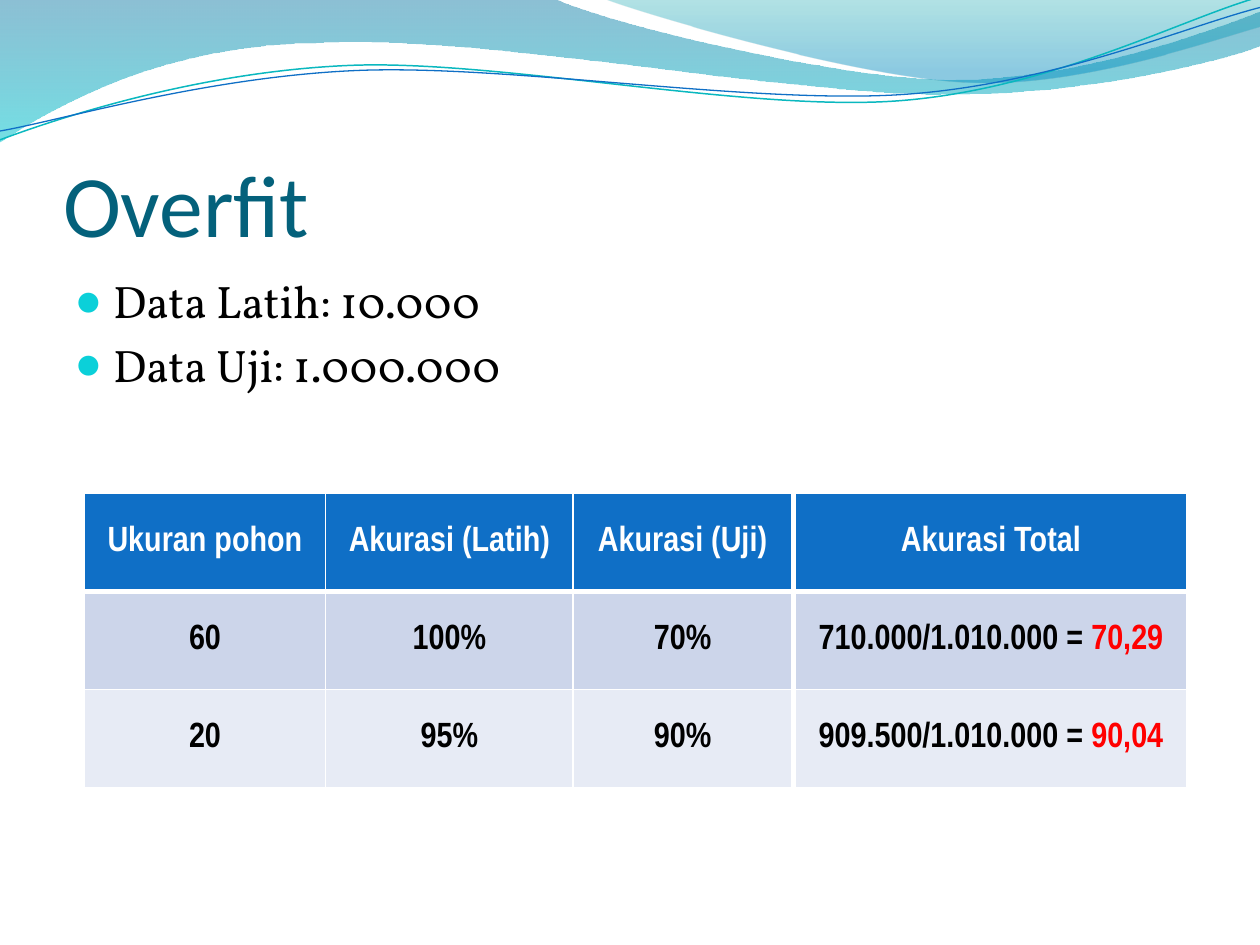
from dataclasses import dataclass
from math import cos, radians, sin

from lxml.etree import SubElement
from pptx import Presentation
from pptx.dml.color import RGBColor
from pptx.enum.text import MSO_ANCHOR as Anchor, MSO_AUTO_SIZE as AutoSize, PP_ALIGN as Align
from pptx.oxml.ns import qn
from pptx.util import Pt

Point = tuple[float, float]
WHITE, BLACK, RED, BLUE = "FFFFFF", "000000", "FF0000", "0F6FC6"
LINE_TILT = 357.3


@dataclass
class Stop:
    position: float
    color: str
    opacity: int


@dataclass
class Wave:
    start: Point
    segments: list[tuple[Point, ...]]  # one point: straight line; three: cubic curve
    stops: tuple[Stop, ...] = ()
    line_color: str = ""
    line_width: float = 0
    center: Point = (0, 0)
    rotation: float = 0


@dataclass
class Grid:
    left: float
    widths: list[float]
    rows: list[list[tuple[str, ...]]]  # a second text in a cell is the red result


WAVES = [
    Wave((0, -0.7), [
        ((316.8, -0.7),),
        ((342.7, 12.2), (478.1, 45.4), (545.8, 45.4)),
        ((614.2, 45.4), (689.8, 18.7), (720, 6.5)),
        ((720.7, 25.9),),
        ((707.8, 31.7), (626.4, 54.7), (537.1, 54)),
        ((447.8, 54), (275, 20.2), (185, 24.5)),
        ((92.9, 25.2), (33.1, 59.8), (-0.7, 81.4)),
    ], stops=(Stop(0, "0074A1", 45), Stop(1, "00C6CF", 55))),
    Wave((344.9, -0.7), [
        ((366.5, 7.9), (491, 44.6), (553.7, 46.8)),
        ((616.3, 49.7), (691.9, 23), (720, 15.1)),
        ((720, 0),),
    ], stops=(Stop(0, "00A1A9", 30), Stop(0.8, "008BBF", 45))),
    Wave((0, 79.9), [
        ((34.6, 67), (113.8, 41), (199.4, 37.4)),
        ((284.4, 33.8), (427, 64.1), (513.4, 57.6)),
        ((599.8, 51.1), (675.4, 10.8), (718.6, -1.4)),
    ], line_color="0AB8BF", line_width=0.85, center=(359.3, 41.4), rotation=LINE_TILT),
    Wave((0, 74.9), [
        ((33.8, 69.1), (118.1, 43.9), (203.8, 40.3)),
        ((290.2, 36.7), (429.8, 59.8), (516.2, 54)),
        ((601.9, 48.2), (677.5, 15.1), (720, 4.3)),
    ], line_color=BLUE, line_width=0.75, center=(359.6, 42.5), rotation=LINE_TILT),
]

GRIDS = [
    Grid(48.2, [137.9, 141.5, 125], [
        [("Ukuran pohon",), ("Akurasi (Latih)",), ("Akurasi (Uji)",)],
        [("60",), ("100%",), ("70%",)],
        [("20",), ("95%",), ("90%",)],
    ]),
    Grid(454.3, [223.9], [
        [("Akurasi Total",)],
        [("710.000/1.010.000 = ", "70,29")],
        [("909.500/1.010.000 = ", "90,04")],
    ]),
]
GRID_TOP, ROW_HEIGHT = 282, 56
ROW_FILLS = [BLUE, "CCD5EA", "E7EBF5"]


def rgb(color: str) -> RGBColor:
    return RGBColor.from_string(color)


def format_span(span, font: str, size: float, color: str, bold: bool = False) -> None:
    span.font.name, span.font.size, span.font.bold = font, Pt(size), bold
    span.font.color.rgb = rgb(color)


def level_point(point: Point, wave: Wave) -> tuple[Pt, Pt]:
    """Where the point lies before the shape is rotated about its center."""
    angle = radians(-wave.rotation)
    (center_x, center_y), (x, y) = wave.center, point
    dx, dy = x - center_x, y - center_y
    return (Pt(center_x + dx * cos(angle) - dy * sin(angle)),
            Pt(center_y + dx * sin(angle) + dy * cos(angle)))


def bend_segments(shape, segments: list[tuple[Point, ...]]) -> None:
    """Join each three straight steps of a curve into one cubic segment."""
    steps = iter(list(shape.element.iter(qn("a:lnTo"))))
    for segment in segments:
        group = [next(steps) for _ in segment]
        if len(group) == 3:
            group[0].addprevious(curve := group[0].makeelement(qn("a:cubicBezTo")))
            for step in group:
                curve.append(step[0])
                step.getparent().remove(step)


def draw_wave(page, wave: Wave) -> None:
    points = [level_point(point, wave) for segment in wave.segments for point in segment]
    builder = page.shapes.build_freeform(*level_point(wave.start, wave))
    builder.add_line_segments(points, close=bool(wave.stops))
    shape = builder.convert_to_shape()
    bend_segments(shape, wave.segments)
    shape.rotation = wave.rotation
    shape.shadow.inherit = False
    if not wave.stops:
        shape.fill.background()
        shape.line.color.rgb = rgb(wave.line_color)
        shape.line.width = Pt(wave.line_width)
        return
    shape.line.fill.background()
    shape.fill.gradient()
    shape.fill.gradient_angle = 270
    for target, stop in zip(shape.fill.gradient_stops, wave.stops):
        target.position = stop.position
        target.color.rgb = rgb(stop.color)
    for color, stop in zip(shape.element.iter(qn("a:srgbClr")), wave.stops):
        SubElement(color, qn("a:alpha"), val=str(stop.opacity * 1000))


def draw_title(page, text: str) -> None:
    title = page.shapes.title
    title.left, title.top, title.width, title.height = Pt(36), Pt(55.8), Pt(648), Pt(90)
    frame = title.text_frame
    frame.text = text
    frame.auto_size, frame.vertical_anchor = AutoSize.NONE, Anchor.BOTTOM
    frame.margin_left = frame.margin_right = frame.margin_bottom = 0
    frame.paragraphs[0].alignment = Align.LEFT
    format_span(frame.paragraphs[0].runs[0], "Calibri", 50, "04617B")


def add_bullet(para) -> None:
    props = para._p.get_or_add_pPr()
    props.set("marL", str(Pt(21.6)))
    props.set("indent", str(-Pt(21.6)))
    SubElement(SubElement(props, qn("a:spcBef")), qn("a:spcPct"), val="20000")
    SubElement(SubElement(props, qn("a:buClr")), qn("a:srgbClr"), val="0BD0D9")
    SubElement(props, qn("a:buSzPct"), val="95000")
    SubElement(props, qn("a:buFont"), typeface="Calibri")
    SubElement(props, qn("a:buChar"), char="●")


def draw_bullets(page, lines: list[str]) -> None:
    box = page.shapes.add_textbox(Pt(36), Pt(152.6), Pt(648), Pt(105.8))
    box.text_frame.word_wrap = True
    box.text_frame.text = "\n".join(lines)
    for para in box.text_frame.paragraphs:
        add_bullet(para)
        format_span(para.runs[0], "Vollkorn", 26, BLACK)


def set_header_borders(cell) -> None:
    props = cell._tc.get_or_add_tcPr()
    for side, width in (("L", 1), ("R", 1), ("T", 1), ("B", 3)):
        line = SubElement(props, qn(f"a:ln{side}"), w=str(Pt(width)))
        SubElement(SubElement(line, qn("a:solidFill")), qn("a:srgbClr"), val=WHITE)


def draw_grid(page, grid: Grid) -> None:
    row_count = len(grid.rows)
    table = page.shapes.add_table(
        row_count, len(grid.widths), Pt(grid.left), Pt(GRID_TOP),
        Pt(sum(grid.widths)), Pt(ROW_HEIGHT * row_count)).table
    for column, width in zip(table.columns, grid.widths):
        column.width = Pt(width)
    for row, texts in enumerate(grid.rows):
        for column, parts in enumerate(texts):
            cell = table.cell(row, column)
            if row == 0:
                set_header_borders(cell)
            cell.fill.solid()
            cell.fill.fore_color.rgb = rgb(ROW_FILLS[row])
            cell.vertical_anchor = Anchor.MIDDLE
            para = cell.text_frame.paragraphs[0]
            para.alignment = Align.CENTER
            for text, color in zip(parts, (BLACK if row else WHITE, RED)):
                span = para.add_run()
                span.text = text
                format_span(span, "Arial Narrow", 20, color, bold=True)


def main() -> None:
    deck = Presentation()
    deck.slide_width, deck.slide_height = Pt(720), Pt(540)
    page = deck.slides.add_slide(deck.slide_layouts[5])
    for wave in WAVES:
        draw_wave(page, wave)
    # Title, data sizes and accuracy tables
    draw_title(page, "Overfit")
    draw_bullets(page, ["Data Latih: 10.000", "Data Uji: 1.000.000"])
    for grid in GRIDS:
        draw_grid(page, grid)
    deck.save("out.pptx")


if __name__ == "__main__":
    main()
